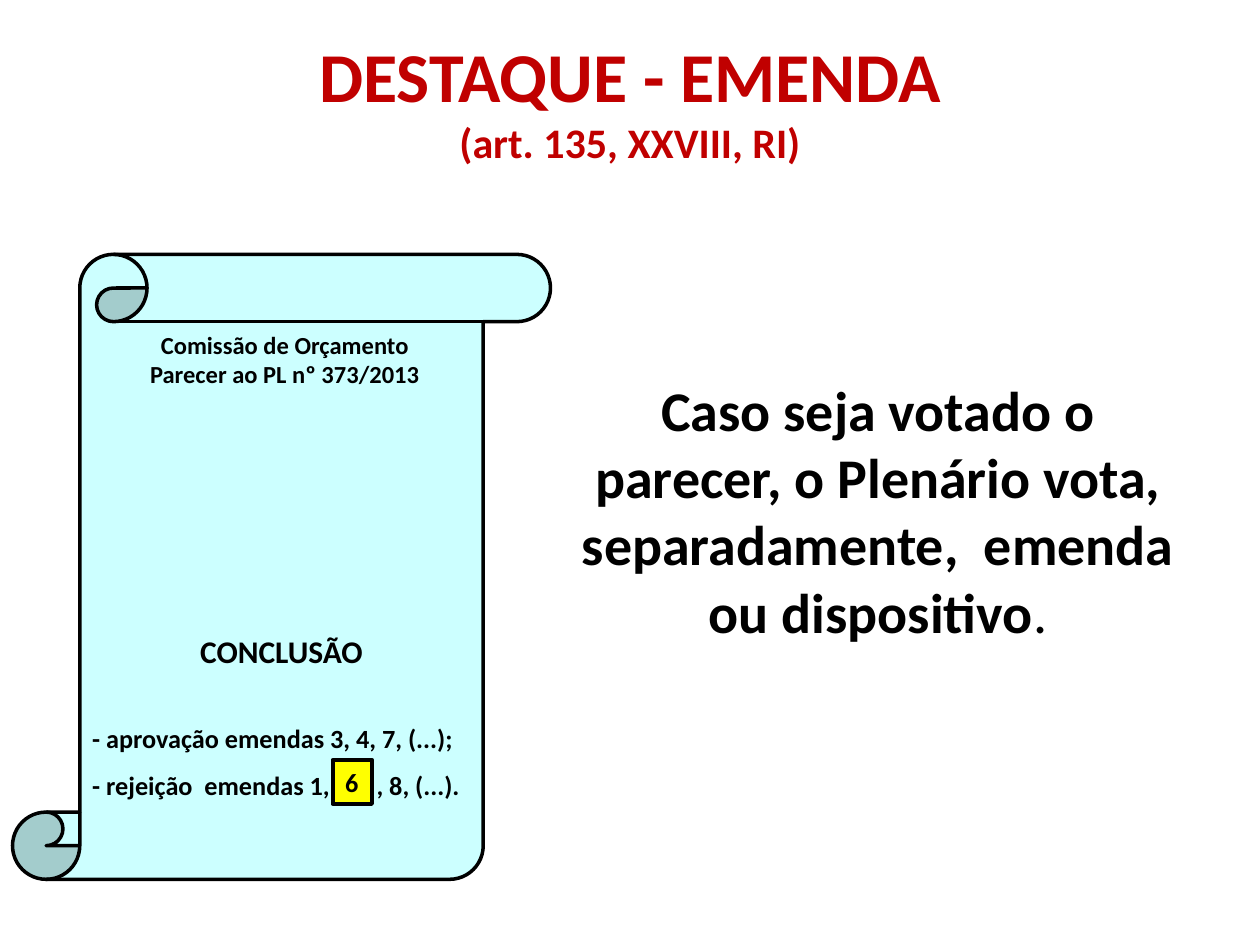
from dataclasses import dataclass

from lxml import etree
from pptx import Presentation
from pptx.dml.color import RGBColor
from pptx.enum.shapes import MSO_SHAPE
from pptx.enum.text import MSO_ANCHOR, PP_ALIGN
from pptx.oxml.ns import qn
from pptx.util import Pt

CENTER, LEFT, JUSTIFY = PP_ALIGN.CENTER, PP_ALIGN.LEFT, PP_ALIGN.JUSTIFY
TOP, MIDDLE, BOTTOM = MSO_ANCHOR.TOP, MSO_ANCHOR.MIDDLE, MSO_ANCHOR.BOTTOM
SCROLL, RECTANGLE = MSO_SHAPE.VERTICAL_SCROLL, MSO_SHAPE.RECTANGLE


@dataclass(frozen=True)
class Theme:
    font: str = "Calibri"
    red: RGBColor = RGBColor(0xC0, 0x00, 0x00)
    black: RGBColor = RGBColor(0x00, 0x00, 0x00)
    paper: RGBColor = RGBColor(0xCC, 0xFF, 0xFF)
    highlight: RGBColor = RGBColor(0xFF, 0xFF, 0x00)
    title: int = 40
    subtitle: int = 24
    statement: int = 32
    conclusion: int = 18
    amendment: int = 15
    heading: int = 14


theme = Theme()


def add_run(paragraph, text, size, color=theme.black, bold=True):
    run = paragraph.add_run()
    run.text = text
    run.font.name = theme.font
    run.font.size = Pt(size)
    run.font.bold = bold
    run.font.color.rgb = color


def prepare_frame(shape, anchor, align, wrap=True):
    frame = shape.text_frame
    frame.word_wrap = wrap
    frame.vertical_anchor = anchor
    frame.paragraphs[0].alignment = align
    return frame


deck = Presentation()
deck.slide_width, deck.slide_height = Pt(720), Pt(540)
slide = deck.slides.add_slide(deck.slide_layouts[6])
shapes = slide.shapes

title = shapes.add_textbox(Pt(139), Pt(9.4), Pt(442), Pt(95))
title_line = prepare_frame(title, MIDDLE, CENTER).paragraphs[0]
add_run(title_line, "DESTAQUE - EMENDA", theme.title, theme.red)
title_line.add_line_break()
add_run(title_line, "(art. 135, XXVIII, RI)", theme.subtitle, theme.red)

statement = shapes.add_textbox(Pt(314.6), Pt(211), Pt(374.4), Pt(166.3))
statement_line = prepare_frame(statement, TOP, CENTER).paragraphs[0]
statement_line.space_before = Pt(6.4)
add_run(
    statement_line,
    "Caso seja votado o parecer, o Plenário vota, separadamente,  emenda ou dispositivo",
    theme.statement,
)
add_run(statement_line, ".", theme.statement, bold=False)

scroll = shapes.add_shape(SCROLL, Pt(7.2), Pt(145.4), Pt(307.4), Pt(357.1))
amendment_mark = shapes.add_shape(RECTANGLE, Pt(190.1), Pt(434.2), Pt(22.5), Pt(25.2))
for shape, fill, line_width in (
    (scroll, theme.paper, 2),
    (amendment_mark, theme.highlight, 2.25),
):
    shape.shadow.inherit = False
    shape.fill.solid()
    shape.fill.fore_color.rgb = fill
    shape.line.color.rgb = theme.black
    shape.line.width = Pt(line_width)

report = prepare_frame(scroll, BOTTOM, CENTER)
report.margin_bottom = Pt(25.7)
conclusion = report.paragraphs[0]
conclusion.space_after = Pt(21)
add_run(conclusion, "CONCLUSÃO", theme.conclusion)
for decision in (
    "- aprovação emendas 3, 4, 7, (...);",
    "- rejeição  emendas 1,\t, 8, (...).",
):
    decision_line = report.add_paragraph()
    decision_line.alignment = JUSTIFY
    decision_line.line_spacing = 1.5
    add_run(decision_line, decision, theme.amendment)
tab_stops = etree.SubElement(decision_line._p.get_or_add_pPr(), qn("a:tabLst"))
etree.SubElement(tab_stops, qn("a:tab"), pos=str(Pt(162.5)), algn="l")

heading = shapes.add_textbox(Pt(77.8), Pt(185), Pt(169.9), Pt(41))
heading_frame = prepare_frame(heading, TOP, CENTER, wrap=False)
committee = heading_frame.paragraphs[0]
add_run(committee, "Comissão de Orçamento", theme.heading)
opinion = heading_frame.add_paragraph()
opinion.alignment = CENTER
add_run(opinion, "Parecer ao PL nº 373/2013", theme.heading)

mark_line = prepare_frame(amendment_mark, TOP, LEFT).paragraphs[0]
add_run(mark_line, "6", theme.amendment)

deck.save("out.pptx")
